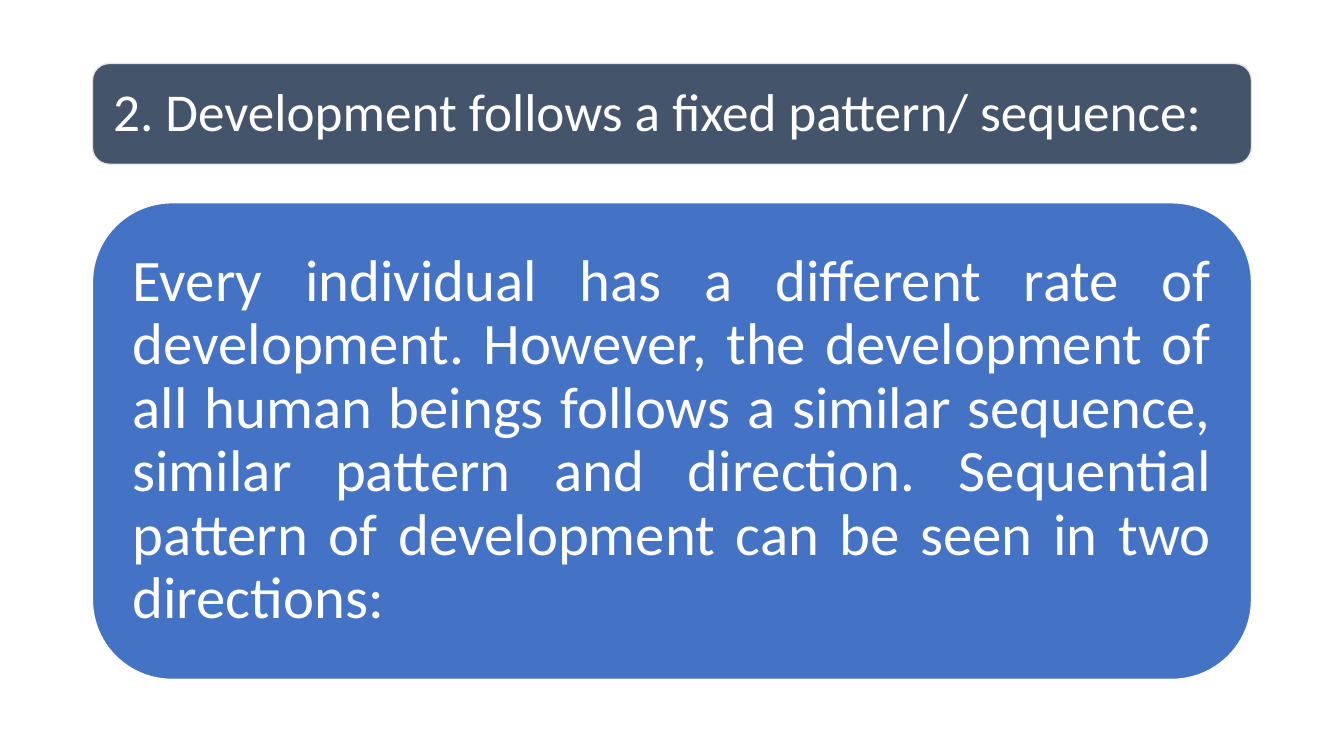
from dataclasses import dataclass

from lxml import etree
from pptx import Presentation
from pptx import util as u
from pptx.dml.color import RGBColor
from pptx.enum import shapes, text
from pptx.oxml.ns import qn


@dataclass(frozen=True)
class Theme:
    """Colours, font and type sizes of the deck."""
    font: str = "Calibri"
    ink: RGBColor = RGBColor(0xFF, 0xFF, 0xFF)
    banner: RGBColor = RGBColor(0x44, 0x54, 0x6A)
    banner_edge: RGBColor = RGBColor(0xE7, 0xE6, 0xE6)
    card: RGBColor = RGBColor(0x44, 0x72, 0xC4)
    card_edge: RGBColor = RGBColor(0xFF, 0xFF, 0xFF)
    title_size: u.Pt = u.Pt(38)
    body_size: u.Pt = u.Pt(42)


THEME = Theme()
TITLE = "2. Development follows a fixed pattern/ sequence:"
BODY = (
    "Every individual has a different rate of development. However, the "
    "development of all human beings follows a similar sequence, similar "
    "pattern and direction. Sequential pattern of development can be seen "
    "in two directions:"
)


def add_panel(page, box, fill, edge):
    """Draw a rounded panel that fills the box."""
    panel = page.shapes.add_shape(shapes.MSO_SHAPE.ROUNDED_RECTANGLE, *box)
    panel.shadow.inherit = False
    panel.fill.solid()
    panel.fill.fore_color.rgb = fill
    panel.line.color.rgb = edge
    panel.line.width = u.Pt(1)


def place_text(page, holder, box, inset, margin, words, size, align):
    """Set a placeholder's text inside the box and bring it to the front."""
    left, top, width, height = box
    holder.left, holder.top = left + inset, top + inset
    holder.width, holder.height = width - 2 * inset, height - 2 * inset
    page.shapes._spTree.append(holder._element)
    frame = holder.text_frame
    frame.text = words
    frame.word_wrap = True
    frame.auto_size = text.MSO_AUTO_SIZE.NONE
    frame.vertical_anchor = text.MSO_ANCHOR.MIDDLE
    frame.margin_left = frame.margin_right = margin
    frame.margin_top = frame.margin_bottom = margin
    para = frame.paragraphs[0]
    para.alignment = align
    para.line_spacing = 0.9
    para.space_before = u.Pt(0)
    para.font.name = THEME.font
    para.font.size = size
    para.font.color.rgb = THEME.ink
    properties = para._p.get_or_add_pPr()
    properties.set("marL", "0")
    properties.set("indent", "0")
    bullet = etree.Element(qn("a:buNone"))
    properties.find(qn("a:defRPr")).addprevious(bullet)


def add_banner(page, box):
    """Place the heading on its dark banner."""
    add_panel(page, box, THEME.banner, THEME.banner_edge)
    place_text(page, page.shapes.title, box, u.Cm(0.12), u.Cm(0.4),
               TITLE, THEME.title_size, text.PP_ALIGN.LEFT)


def add_card(page, box):
    """Place the justified statement on its blue card."""
    add_panel(page, box, THEME.card, THEME.card_edge)
    place_text(page, page.placeholders[1], box, u.Cm(0.58), u.Cm(0.43),
               BODY, THEME.body_size, text.PP_ALIGN.JUSTIFY)


def main():
    """Build and save the deck."""
    deck = Presentation()
    deck.slide_width, deck.slide_height = u.Cm(33.87), u.Cm(19.05)
    page = deck.slides.add_slide(deck.slide_layouts[1])
    left, width = u.Cm(2.33), u.Cm(29.21)
    add_banner(page, (left, u.Cm(1.6), width, u.Cm(2.54)))
    add_card(page, (left, u.Cm(5.11), width, u.Cm(12.01)))
    deck.save("out.pptx")


if __name__ == "__main__":
    main()
